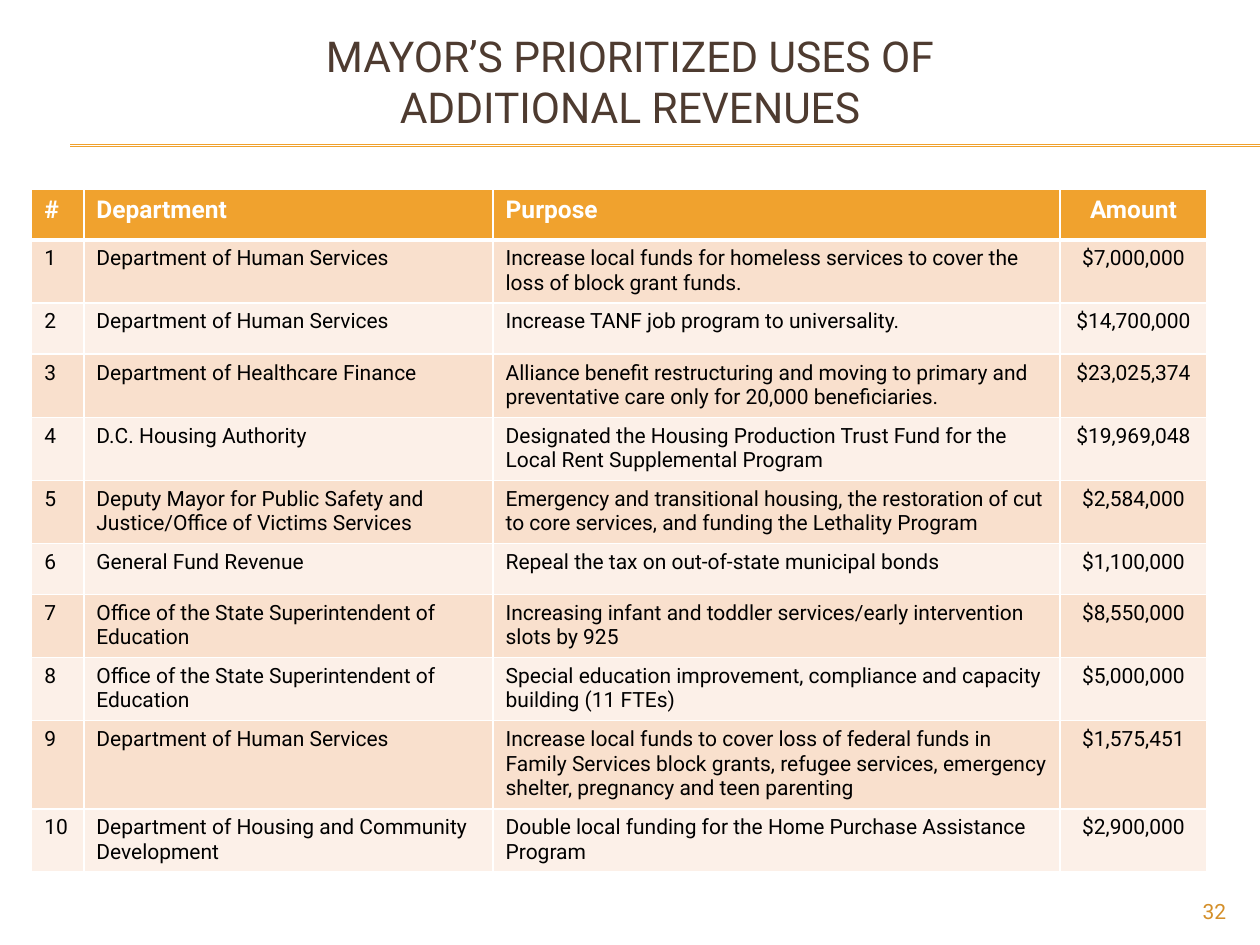
"""Build the slide listing the mayor's prioritized uses of additional revenues."""
from typing import NamedTuple

from lxml import etree
from pptx import Presentation
from pptx import util as u
from pptx.dml import color
from pptx.enum import shapes, text
from pptx.oxml import ns

FONT = "Roboto"
GOLD, WHITE, BLACK = "F0A22E", "FFFFFF", "000000"
BANDS = ("F9E0CD", "FCF0E8")
COL_WIDTHS = (1.05, 8.25, 11.43, 2.96)
ROW_HEIGHT = 1.03
HEADER = ("#", "Department", "Purpose", "Amount")
TITLE = ("MAYOR’S PRIORITIZED USES OF", "ADDITIONAL REVENUES")
LEFT, CENTER, RIGHT = text.PP_ALIGN.LEFT, text.PP_ALIGN.CENTER, text.PP_ALIGN.RIGHT


class Use(NamedTuple):
    department: str
    purpose: str
    amount: str


USES = (
    Use("Department of Human Services",
        "Increase local funds for homeless services to cover the loss of block grant funds.",
        "$7,000,000"),
    Use("Department of Human Services",
        "Increase TANF job program to universality.", "$14,700,000"),
    Use("Department of Healthcare Finance",
        "Alliance benefit restructuring and moving to primary and preventative care only "
        "for 20,000 beneficiaries.", "$23,025,374"),
    Use("D.C. Housing Authority",
        "Designated the Housing Production Trust Fund for the Local Rent Supplemental Program",
        "$19,969,048"),
    Use("Deputy Mayor for Public Safety and Justice/Office of Victims Services",
        "Emergency and transitional housing, the restoration of cut to core services, "
        "and funding the Lethality Program", "$2,584,000"),
    Use("General Fund Revenue",
        "Repeal the tax on out-of-state municipal bonds", "$1,100,000"),
    Use("Office of the State Superintendent of Education",
        "Increasing infant and toddler services/early intervention slots by 925",
        "$8,550,000"),
    Use("Office of the State Superintendent of Education",
        "Special education improvement, compliance and capacity building (11 FTEs)",
        "$5,000,000"),
    Use("Department of Human Services",
        "Increase local funds to cover loss of federal funds in Family Services block grants, "
        "refugee services, emergency shelter, pregnancy and teen parenting", "$1,575,451"),
    Use("Department of Housing and Community Development",
        "Double local funding for the Home Purchase Assistance Program", "$2,900,000"),
)


def rgb(value: str) -> color.RGBColor:
    return color.RGBColor.from_string(value)


def write(tf, lines: tuple, size: float, hue: str, align, bold: bool = False) -> None:
    p = tf.paragraphs[0]
    p.alignment = align
    for i, line in enumerate(lines):
        if i:
            p.add_line_break()
        r = p.add_run()
        r.text = line
        for name, value in {"name": FONT, "size": u.Pt(size), "bold": bold}.items():
            setattr(r.font, name, value)
        r.font.color.rgb = rgb(hue)


def draw_rule(s, y: float) -> None:
    line = s.shapes.add_connector(
        shapes.MSO_CONNECTOR.STRAIGHT, u.Cm(1.42), u.Cm(y), u.Cm(25.4), u.Cm(y))
    line.line.color.rgb = rgb(GOLD)
    line.line.width = u.Pt(0.75)
    etree.SubElement(line._element.spPr, ns.qn("a:effectLst"))


def set_borders(cell, top: float, bottom: float) -> None:
    tc_pr = cell._tc.get_or_add_tcPr()
    widths = {"a:lnL": 1, "a:lnR": 1, "a:lnT": top, "a:lnB": bottom}
    for i, (tag, width) in enumerate(widths.items()):
        ln = etree.Element(ns.qn(tag), w=str(u.Pt(width)))
        fill = etree.SubElement(ln, ns.qn("a:solidFill"))
        etree.SubElement(fill, ns.qn("a:srgbClr"), val=WHITE)
        tc_pr.insert(i, ln)


def draw_table(s) -> None:
    rows = [HEADER] + [(str(n), *use) for n, use in enumerate(USES, 1)]
    table = s.shapes.add_table(
        len(rows), len(HEADER), u.Cm(0.64), u.Cm(3.81),
        u.Cm(sum(COL_WIDTHS)), u.Cm(ROW_HEIGHT * len(rows))).table
    for column, width in zip(table.columns, COL_WIDTHS):
        column.width = u.Cm(width)
    for i, row in enumerate(rows):
        table.rows[i].height = u.Cm(ROW_HEIGHT)
        is_header = i == 0
        for j, value in enumerate(row):
            cell = table.cell(i, j)
            cell.fill.solid()
            cell.fill.fore_color.rgb = rgb(GOLD if is_header else BANDS[(i - 1) % 2])
            set_borders(cell, 3 if i == 1 else 1, 3 if is_header else 1)
            write(cell.text_frame, (value,), 14 if is_header else 12,
                  WHITE if is_header else BLACK, CENTER if j == 3 else LEFT, is_header)


def draw_title(s) -> None:
    sp = s.shapes.title
    box = {"left": 0.85, "top": 0.43, "width": 23.7, "height": 2.41}
    for name, value in box.items():
        setattr(sp, name, u.Cm(value))
    tf = sp.text_frame
    frame = {"word_wrap": True, "auto_size": text.MSO_AUTO_SIZE.NONE,
             "vertical_anchor": text.MSO_ANCHOR.MIDDLE}
    for name, value in frame.items():
        setattr(tf, name, value)
    write(tf, TITLE, 24.3, "4E3B30", CENTER)


def draw_page_number(s) -> None:
    sp = s.shapes.add_textbox(u.Cm(22.86), u.Cm(17.98), u.Cm(2.11), u.Cm(0.69))
    sp.text_frame.word_wrap = True
    write(sp.text_frame, ("32",), 12, "D48F29", RIGHT)


def main() -> None:
    prs = Presentation()
    prs.slide_width, prs.slide_height = u.Cm(25.4), u.Cm(19.05)
    s = prs.slides.add_slide(prs.slide_layouts[5])
    for y in (2.92, 2.95):
        draw_rule(s, y)
    draw_page_number(s)
    draw_table(s)
    draw_title(s)
    prs.save("out.pptx")


if __name__ == "__main__":
    main()
